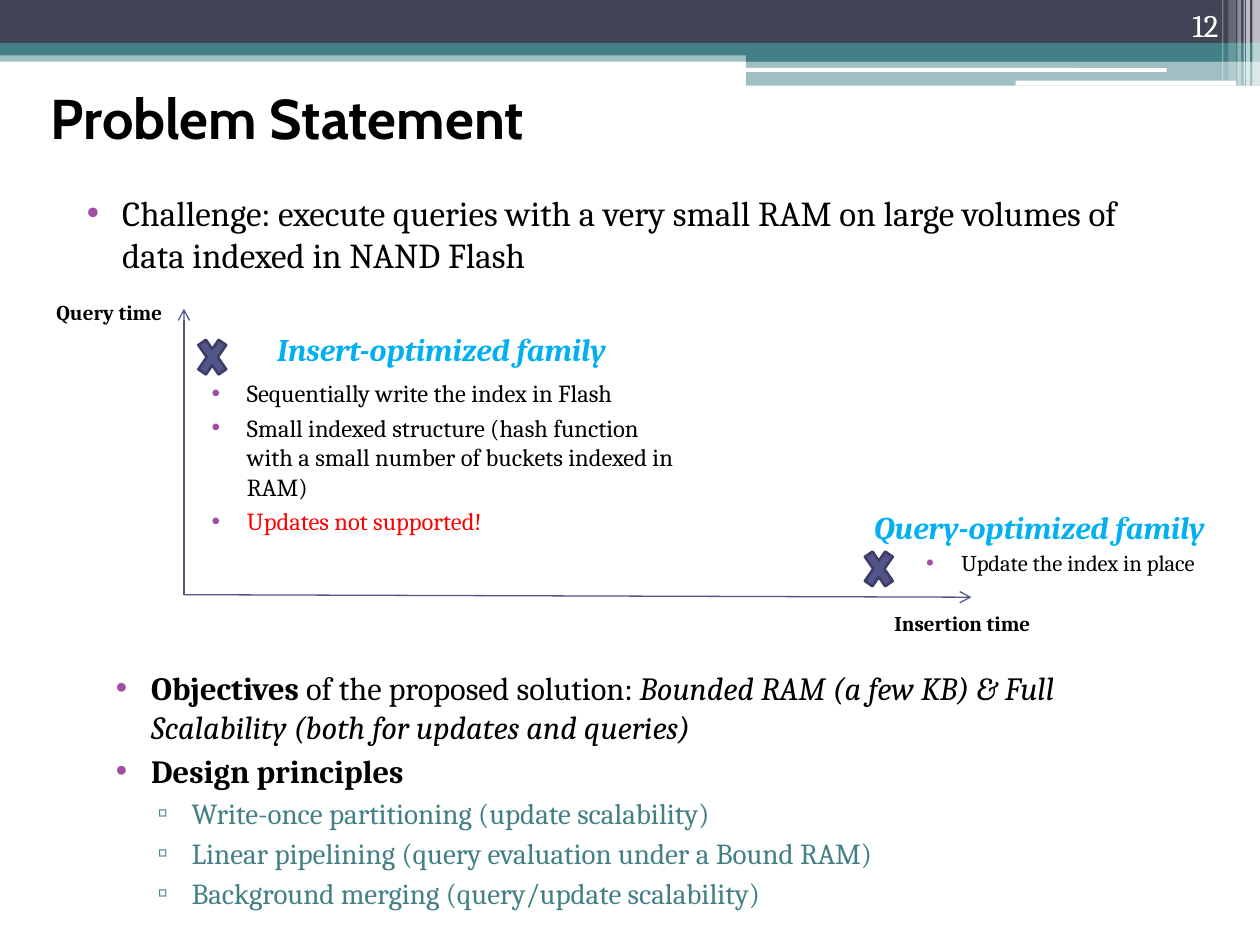
import lxml.etree
import pptx
import pptx.dml.color
import pptx.enum.shapes
import pptx.enum.text
import pptx.oxml.ns
import pptx.util

RGB = pptx.dml.color.RGBColor
SHAPE = pptx.enum.shapes.MSO_SHAPE
ALIGN = pptx.enum.text.PP_ALIGN
ANCHOR = pptx.enum.text.MSO_ANCHOR
AUTO_SIZE = pptx.enum.text.MSO_AUTO_SIZE
qn = pptx.oxml.ns.qn

SLATE = RGB(0x42, 0x44, 0x56)
TEAL = RGB(0x43, 0x80, 0x86)
INDIGO = RGB(0x53, 0x54, 0x8A)
DARK_INDIGO = RGB(0x3D, 0x3E, 0x66)
PURPLE = RGB(0xA0, 0x4D, 0xA3)
SKY = RGB(0x00, 0xB0, 0xF0)
RED = RGB(0xFF, 0x00, 0x00)
BLACK = RGB(0x00, 0x00, 0x00)
WHITE = RGB(0xFF, 0xFF, 0xFF)

COLUMNS, ROWS = 100, 75
COMPARISON_LAYOUT = 4  # a title and four lists

# Bullet levels: character, colour, left margin and hanging indent in columns
BULLETS = [("•", PURPLE, 4, -2.8), ("▫", TEAL, 7.2, -2.7)]


class SlideBuilder:
    """Holds the text style, the grid and the current slide."""

    base_format = {"name": "Cambria", "size": 18, "bold": False,
                   "italic": False, "color": BLACK}

    def __init__(self, deck):
        self.slide = deck.slides.add_slide(deck.slide_layouts[COMPARISON_LAYOUT])
        self.column = deck.slide_width / COLUMNS
        self.row = deck.slide_height / ROWS
        placeholders = {p.placeholder_format.idx: p
                        for p in self.slide.placeholders}
        self.lists = [placeholders[idx] for idx in range(1, 5)]

    def box(self, left, top, width, height):
        return (round(left * self.column), round(top * self.row),
                round(width * self.column), round(height * self.row))

    def place(self, shape, area):
        for name, value in zip(("left", "top", "width", "height"),
                               self.box(*area)):
            setattr(shape, name, value)

    def add_text(self, paragraph, text, **changes):
        run = paragraph.add_run()
        run.text = text
        for name, value in {**self.base_format, **changes}.items():
            if name == "color":
                run.font.color.rgb = value
            else:
                setattr(run.font, name,
                        pptx.util.Pt(value) if name == "size" else value)

    def set_frame(self, frame, **values):
        for name, value in values.items():
            setattr(frame, name, value)

    def title(self, text, area, **changes):
        shape = self.slide.shapes.title
        self.place(shape, area)
        self.set_frame(shape.text_frame, auto_size=AUTO_SIZE.NONE,
                       vertical_anchor=ANCHOR.MIDDLE)
        paragraph = shape.text_frame.paragraphs[0]
        paragraph.alignment = ALIGN.LEFT
        self.add_text(paragraph, text, **changes)

    def bullet_list(self, area, items):
        """Fill the next list with (level, [(text, format), ...]) items."""
        shape = self.lists.pop(0)
        self.place(shape, area)
        frame = shape.text_frame
        self.set_frame(frame, auto_size=AUTO_SIZE.NONE,
                       vertical_anchor=ANCHOR.TOP)
        for number, (level, runs) in enumerate(items):
            paragraph = frame.add_paragraph() if number else frame.paragraphs[0]
            paragraph.level = level
            paragraph.space_before = pptx.util.Pt(3)
            self.bullet(paragraph, *BULLETS[level])
            for text, changes in runs:
                self.add_text(paragraph, text, **changes)

    def bullet(self, paragraph, character, color, margin, indent):
        properties = paragraph._p.get_or_add_pPr()
        properties.set("marL", str(round(margin * self.column)))
        properties.set("indent", str(round(indent * self.column)))
        tint = lxml.etree.SubElement(properties, qn("a:buClr"))
        lxml.etree.SubElement(tint, qn("a:srgbClr"), val=str(color))
        lxml.etree.SubElement(properties, qn("a:buChar"), char=character)

    def label(self, text, area, align=ALIGN.LEFT, anchor=ANCHOR.TOP,
              wrap=False, **changes):
        shape = self.slide.shapes.add_textbox(*self.box(*area))
        self.set_frame(shape.text_frame, word_wrap=wrap, vertical_anchor=anchor)
        paragraph = shape.text_frame.paragraphs[0]
        paragraph.alignment = align
        self.add_text(paragraph, text, **changes)

    def block(self, area, color, opacity=100, kind=SHAPE.RECTANGLE, outline=None):
        shape = self.slide.shapes.add_shape(kind, *self.box(*area))
        shape.shadow.inherit = False
        shape.fill.solid()
        shape.fill.fore_color.rgb = color
        if opacity < 100:
            tint = shape.element.spPr.find(qn("a:solidFill"))[0]
            lxml.etree.SubElement(tint, qn("a:alpha"), val=str(opacity * 1000))
        if outline is None:
            shape.line.fill.background()
        else:
            shape.line.color.rgb = outline
            shape.line.width = pptx.util.Pt(1.5)

    def arrow(self, start, end, color):
        line = self.slide.shapes.add_connector(
            pptx.enum.shapes.MSO_CONNECTOR.STRAIGHT,
            *self.box(*start, *end))
        line.line.color.rgb = color
        line.line.width = pptx.util.Pt(0.75)
        properties = line.element.spPr
        lxml.etree.SubElement(properties.find(qn("a:ln")), qn("a:tailEnd"),
                              type="arrow")
        lxml.etree.SubElement(properties, qn("a:effectLst"))


def main():
    deck = pptx.Presentation()
    deck.slide_width = pptx.util.Inches(10)
    deck.slide_height = pptx.util.Inches(7.5)
    page = SlideBuilder(deck)

    # Header bands
    for area, color, opacity in [
            ((0, 4, 100, 0.9), TEAL, 50),
            ((0, 0, 100, 3.4), SLATE, 100),
            ((0, 3.4, 100, 1), TEAL, 100),
            ((59.2, 3.9, 40.8, 1), TEAL, 100),
            ((59.2, 4.8, 40.8, 2), TEAL, 50)]:
        page.block(area, color, opacity)
    for area in [(59.1, 5.4, 33.5, 0.3), (80.6, 6.4, 17.5, 0.4)]:
        page.block(area, WHITE, kind=SHAPE.ROUNDED_RECTANGLE)

    # Pale stripes at the right edge
    for left, width, height, opacity in [
            (99.4, 0.6, 6.8, 65), (98.9, 0.3, 6.8, 65), (98.7, 0.1, 6.8, 60),
            (98.2, 0.3, 6.8, 40), (97.5, 0.6, 6.4, 20), (97, 0.1, 6.4, 30)]:
        page.block((left, 0, width, height), WHITE, opacity)
    page.label("12", (89.4, 0, 8.3, 4), ALIGN.RIGHT, ANCHOR.BOTTOM, True,
               color=WHITE)

    # Title and challenge
    page.title("Problem Statement", (3, 5.2, 95.1, 8.2),
               name="Cabin", size=32, bold=True)
    page.bullet_list((4.7, 14.7, 85.5, 9.3), [
        (0, [("Challenge: execute queries with a very small RAM on large "
              "volumes of data indexed in NAND Flash", {"size": 20})])])

    # Trade-off chart: axes, their names and the two families
    origin = (14.6, 47.2)
    for tip in [(77.1, 47.4), (14.6, 24.5)]:
        page.arrow(origin, tip, INDIGO)
    for text, area in [("Query time", (3.5, 23.3, 11.7, 3)),
                       ("Insertion time", (70, 48, 14.5, 3))]:
        page.label(text, area, size=12, bold=True)
    for text, area in [("Insert-optimized family", (18.4, 25.7, 33.3, 4)),
                       ("Query-optimized family", (65.7, 39.8, 33.6, 4))]:
        page.label(text, area, ALIGN.CENTER, bold=True, italic=True, color=SKY)
    for left, top in [(15.3, 26.1), (68.2, 42.9)]:
        page.block((left, top, 3.1, 4.5), INDIGO, kind=SHAPE.MATH_MULTIPLY,
                   outline=DARK_INDIGO)
    page.bullet_list((14.6, 29.5, 40.9, 14.6), [
        (0, [(text, {"size": 14, "color": color})]) for text, color in [
            ("Sequentially write the index in Flash", BLACK),
            ("Small indexed structure (hash function with a small number of "
             "buckets indexed in RAM)", BLACK),
            ("Updates not supported!", RED)]])
    page.bullet_list((71.3, 43.1, 26.8, 4.1), [
        (0, [("Update the index in place", {"size": 12.9})])])

    # Objectives and design principles
    plain = {"size": 18.5}
    strong = {**plain, "bold": True}
    principles = ["Write-once partitioning (update scalability)",
                  "Linear pipelining (query evaluation under a Bound RAM)",
                  "Background merging (query/update scalability)"]
    page.bullet_list((7, 52.5, 83.2, 19.7), [
        (0, [("Objectives", strong),
             (" of the proposed solution: ", plain),
             ("Bounded RAM (a few KB) & Full Scalability (both for updates "
              "and queries)", {**plain, "italic": True})]),
        (0, [("Design principles", strong)]),
        *[(1, [(text, {"size": 16.6, "color": TEAL})]) for text in principles]])

    deck.save("out.pptx")


if __name__ == "__main__":
    main()
